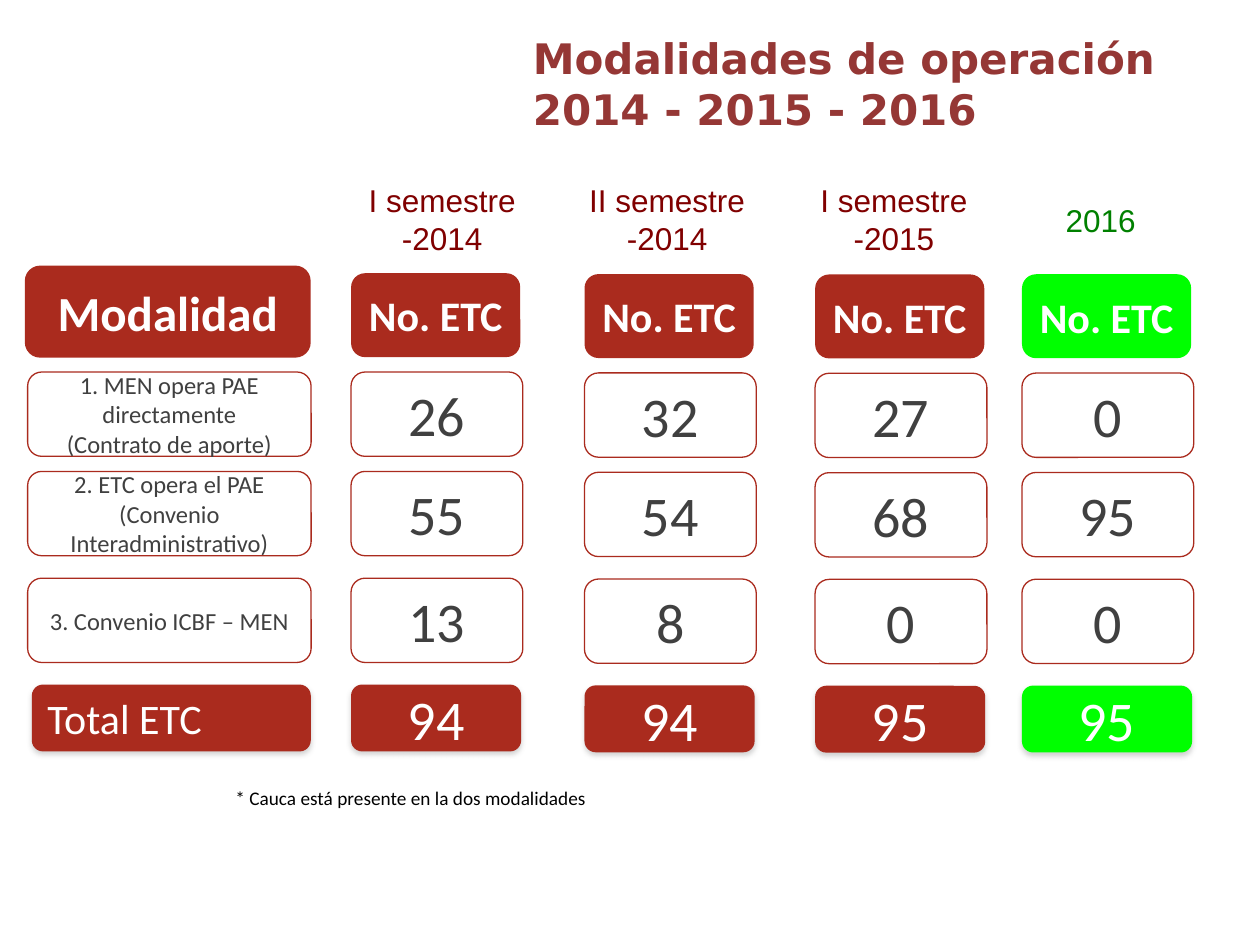
from lxml import etree
from pptx import Presentation
from pptx.dml.color import RGBColor
from pptx.enum.shapes import MSO_SHAPE
from pptx.enum.text import MSO_ANCHOR, PP_ALIGN
from pptx.oxml import parse_xml
from pptx.oxml.ns import nsdecls, qn
from pptx.util import Pt

ROUNDED = MSO_SHAPE.ROUNDED_RECTANGLE
LEFT, CENTER = PP_ALIGN.LEFT, PP_ALIGN.CENTER
TOP, MIDDLE = MSO_ANCHOR.TOP, MSO_ANCHOR.MIDDLE
RED, GREEN, WHITE, GREY = "AA2B1E", "00FF00", "FFFFFF", "404040"
SHADOW = f"""<a:outerShdw {nsdecls('a')} blurRad="{Pt(3.1)}" dist="{Pt(1.8)}"
  dir="5400000" algn="ctr" rotWithShape="0">
  <a:srgbClr val="808080"><a:alpha val="35000"/></a:srgbClr></a:outerShdw>"""


def write(s, text, size, color, font="Calibri", bold=False, align=CENTER, anchor=MIDDLE):
    """Fill a shape or text box with text, one paragraph per line."""
    tf = s.text_frame
    tf.word_wrap = True
    tf.vertical_anchor = anchor
    tf.text = text
    for p in tf.paragraphs:
        p.alignment = align
        for r in p.runs:
            r.font.name, r.font.size, r.font.bold = font, Pt(size), bold
            r.font.color.rgb = RGBColor.from_string(color)


def add_box(x, y, w, h, fill, line=None, shadow=False):
    s = shapes.add_shape(ROUNDED, Pt(x), Pt(y), Pt(w), Pt(h))
    s.shadow.inherit = False
    s.fill.solid()
    s.fill.fore_color.rgb = RGBColor.from_string(fill)
    if line:
        s.line.color.rgb = RGBColor.from_string(line)
        s.line.width = Pt(0.75)
    else:
        s.line.fill.background()
    if shadow:
        s._element.spPr.find(qn("a:effectLst")).append(parse_xml(SHADOW))
    return s


prs = Presentation()
prs.slide_width, prs.slide_height = Pt(720), Pt(540)
shapes = prs.slides.add_slide(prs.slide_layouts[6]).shapes

# Title and footnote
s = shapes.add_textbox(Pt(297.4), Pt(15.1), Pt(397.4), Pt(65.5))
write(s, "Modalidades de operación 2014 - 2015 - 2016", 24, "953735",
      font="DejaVu Sans", bold=True, align=LEFT, anchor=TOP)
s = shapes.add_textbox(Pt(127.4), Pt(445.7), Pt(368.6), Pt(20.9))
write(s, "* Cauca está presente en la dos modalidades", 11, "000000", align=LEFT, anchor=TOP)

# Row labels
row_tops = [212.6, 269.4, 330.4]
row_labels = [
    "1. MEN opera PAE directamente\n(Contrato de aporte)",
    "2. ETC opera el PAE\n(Convenio Interadministrativo)",
    "3. Convenio ICBF – MEN",
]
write(add_box(14.2, 151.8, 163.4, 52.6, RED), "Modalidad", 28, WHITE, bold=True)
for y, label in zip(row_tops, row_labels):
    write(add_box(15.8, y, 162, 48.2, WHITE, line=RED), label, 14, GREY)
write(add_box(18.2, 391.2, 159.4, 38.2, RED, shadow=True), "Total ETC", 24, WHITE, align=LEFT)

# Period columns: left, top offset, fill, values, total, caption, caption colour and frame
columns = [
    (200.6, 0, RED, [26, 55, 13], 94, "I semestre -2014", "800000", (201.6, 100.1, 102.2, 51.1)),
    (334, 0.5, RED, [32, 54, 8], 94, "II semestre -2014", "800000", (329, 100.1, 104.4, 51.1)),
    (465.8, 0.7, RED, [27, 68, 0], 95, "I semestre -2015", "800000", (456.5, 100.1, 108.7, 51.1)),
    (584, 0.6, GREEN, [0, 95, 0], 95, "2016", "008000", (574.6, 111.6, 108.7, 28.8)),
]
for x, dy, fill, values, total, caption, color, frame in columns:
    s = shapes.add_textbox(*map(Pt, frame))
    write(s, caption, 18, color, font="Arial", anchor=TOP)
    write(add_box(x, 156.1 + dy, 96.7, 48, fill), "No. ETC", 24, WHITE, bold=True)
    for y, value in zip(row_tops, values):
        write(add_box(x, y + dy, 98.2, 48.2, WHITE, line=RED), str(value), 32, GREY)
    write(add_box(x, 391.2 + dy, 97.2, 38.2, fill, shadow=True), str(total), 32, WHITE)

prs.save("out.pptx")
